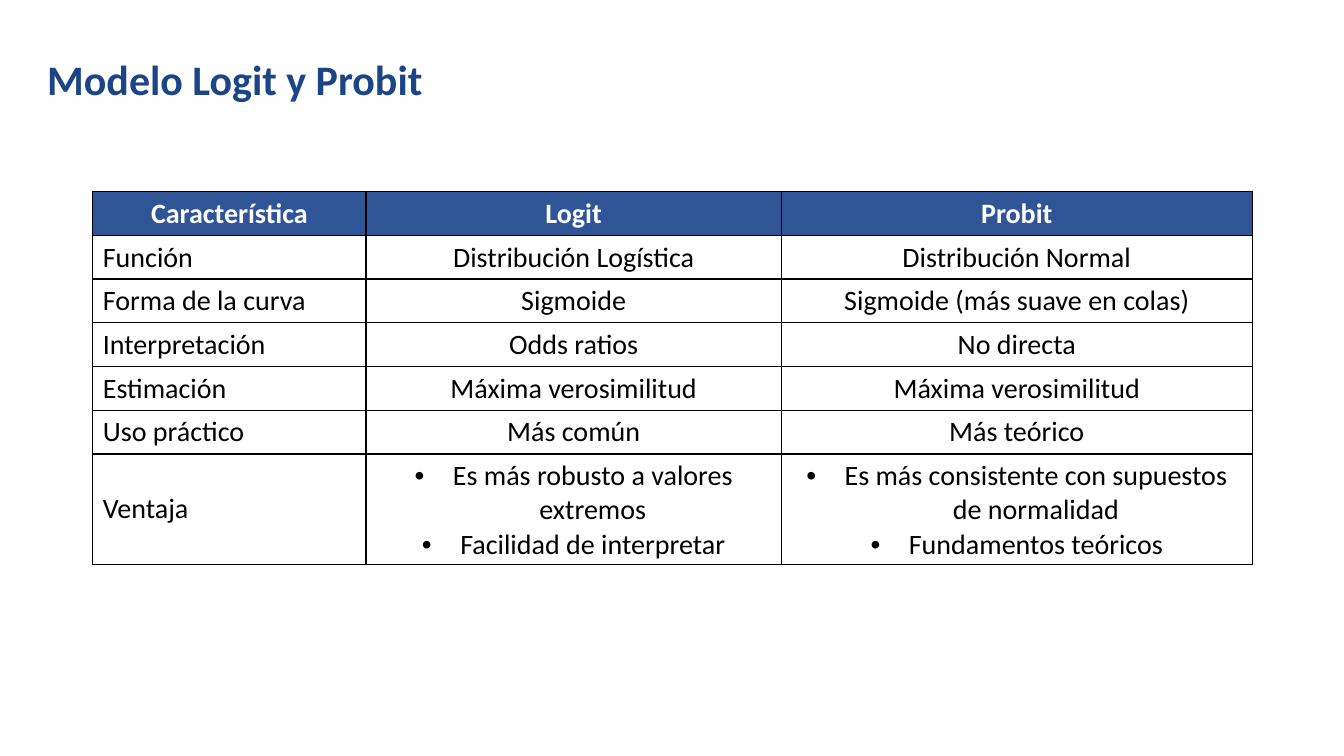
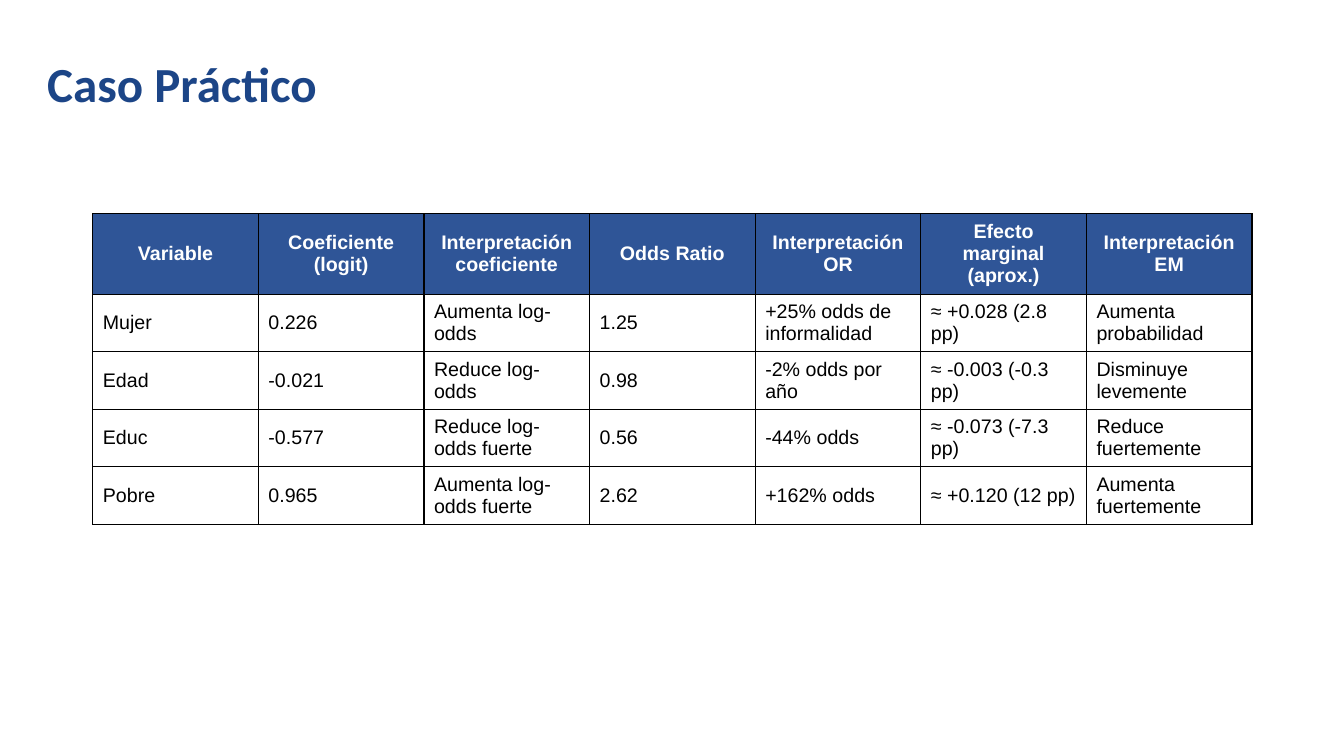
from lxml.etree import SubElement
from pptx import Presentation
from pptx.dml.color import RGBColor
from pptx.enum.text import MSO_ANCHOR, PP_ALIGN
from pptx.oxml.ns import qn
from pptx.util import Inches, Pt

COLORS = {"title": "1C4587", "header": "2F5597", "header_text": "FFFFFF",
          "text": "000000", "border": "000000"}
TITLE_FONT = "Calibri"
TABLE_LEFT, TABLE_WIDTH = 0.92, 11.5

SLIDES = [
    {
        "title": "Modelo Logit y Probit", "title_size": 30, "title_height": 0.71,
        "top": 1.9, "font": "Calibri", "size": 20, "body_align": PP_ALIGN.CENTER,
        "columns": [2.71, 4.12, 4.67],
        "heights": [0.43] * 6 + [1.1],
        "rows": [
            ["Característica", "Logit", "Probit"],
            ["Función", "Distribución Logística", "Distribución Normal"],
            ["Forma de la curva", "Sigmoide", "Sigmoide (más suave en colas)"],
            ["Interpretación", "Odds ratios", "No directa"],
            ["Estimación", "Máxima verosimilitud", "Máxima verosimilitud"],
            ["Uso práctico", "Más común", "Más teórico"],
            ["Ventaja",
             ["Es más robusto a valores extremos", "Facilidad de interpretar"],
             ["Es más consistente con supuestos de normalidad", "Fundamentos teóricos"]],
        ],
    },
    {
        "title": "Caso Práctico", "title_size": 35, "title_height": 0.79,
        "top": 2.12, "font": "Arial", "size": 14, "body_align": PP_ALIGN.LEFT,
        "columns": [TABLE_WIDTH / 7] * 7,
        "heights": [0.8] + [0.57] * 4,
        "rows": [
            ["Variable", "Coeficiente (logit)", "Interpretación coeficiente", "Odds Ratio",
             "Interpretación OR", "Efecto marginal (aprox.)", "Interpretación EM"],
            ["Mujer", "0.226", "Aumenta log-odds", "1.25", "+25% odds de informalidad",
             "≈ +0.028 (2.8 pp)", "Aumenta probabilidad"],
            ["Edad", "-0.021", "Reduce log-odds", "0.98", "-2% odds por año",
             "≈ -0.003 (-0.3 pp)", "Disminuye levemente"],
            ["Educ", "-0.577", "Reduce log-odds fuerte", "0.56", "-44% odds",
             "≈ -0.073 (-7.3 pp)", "Reduce fuertemente"],
            ["Pobre", "0.965", "Aumenta log-odds fuerte", "2.62", "+162% odds",
             "≈ +0.120 (12 pp)", "Aumenta fuertemente"],
        ],
    },
]


def rgb(name):
    return RGBColor.from_string(COLORS[name])


def style_runs(paragraph, font, size, color, bold):
    for run in paragraph.runs:
        run.font.name = font
        run.font.size = Pt(size)
        run.font.color.rgb = rgb(color)
        run.font.bold = bold


def add_bullet(paragraph):
    props = paragraph._p.get_or_add_pPr()
    props.set("marL", str(Inches(0.38)))
    props.set("indent", str(-Inches(0.38)))
    SubElement(SubElement(props, qn("a:buClr")), qn("a:srgbClr"), val=COLORS["text"])
    SubElement(props, qn("a:buFont"), typeface="Arial")
    SubElement(props, qn("a:buChar"), char="•")


def add_borders(cell):
    props = cell._tc.get_or_add_tcPr()
    for side in ("lnL", "lnR", "lnT", "lnB"):
        line = SubElement(props, qn(f"a:{side}"), w=str(Pt(1)))
        SubElement(SubElement(line, qn("a:solidFill")), qn("a:srgbClr"), val=COLORS["border"])


def add_title(slide, content):
    title = slide.shapes.add_textbox(Inches(0.37), Inches(0.43), Inches(12.59),
                                     Inches(content["title_height"]))
    frame = title.text_frame
    frame.word_wrap = True
    frame.margin_left = frame.margin_right = Inches(0.1)
    frame.margin_top = frame.margin_bottom = Inches(0.1)
    frame.text = content["title"]
    style_runs(frame.paragraphs[0], TITLE_FONT, content["title_size"], "title", True)


def fill_cell(cell, entry, content, is_header, align):
    add_borders(cell)
    if is_header:
        cell.fill.solid()
        cell.fill.fore_color.rgb = rgb("header")
    else:
        cell.fill.background()
    cell.vertical_anchor = MSO_ANCHOR.MIDDLE
    bulleted = isinstance(entry, list)
    cell.text_frame.text = "\n".join(entry) if bulleted else entry
    for paragraph in cell.text_frame.paragraphs:
        paragraph.alignment = align
        if bulleted:
            add_bullet(paragraph)
        style_runs(paragraph, content["font"], content["size"],
                   "header_text" if is_header else "text", is_header)


def add_comparison(slide, content):
    rows, columns, heights = content["rows"], content["columns"], content["heights"]
    table = slide.shapes.add_table(len(rows), len(columns), Inches(TABLE_LEFT),
                                   Inches(content["top"]), Inches(TABLE_WIDTH),
                                   Inches(sum(heights))).table
    table.horz_banding = False
    for column, width in zip(table.columns, columns):
        column.width = Inches(width)
    for row, height in zip(table.rows, heights):
        row.height = Inches(height)
    for r, row in enumerate(rows):
        for c, entry in enumerate(row):
            if r == 0:
                align = PP_ALIGN.CENTER
            else:
                align = content["body_align"] if c else PP_ALIGN.LEFT
            fill_cell(table.cell(r, c), entry, content, r == 0, align)


def main():
    deck = Presentation()
    deck.slide_width, deck.slide_height = Inches(13.33), Inches(7.5)
    for content in SLIDES:
        slide = deck.slides.add_slide(deck.slide_layouts[6])
        add_title(slide, content)
        add_comparison(slide, content)
    deck.save("out.pptx")


if __name__ == "__main__":
    main()
